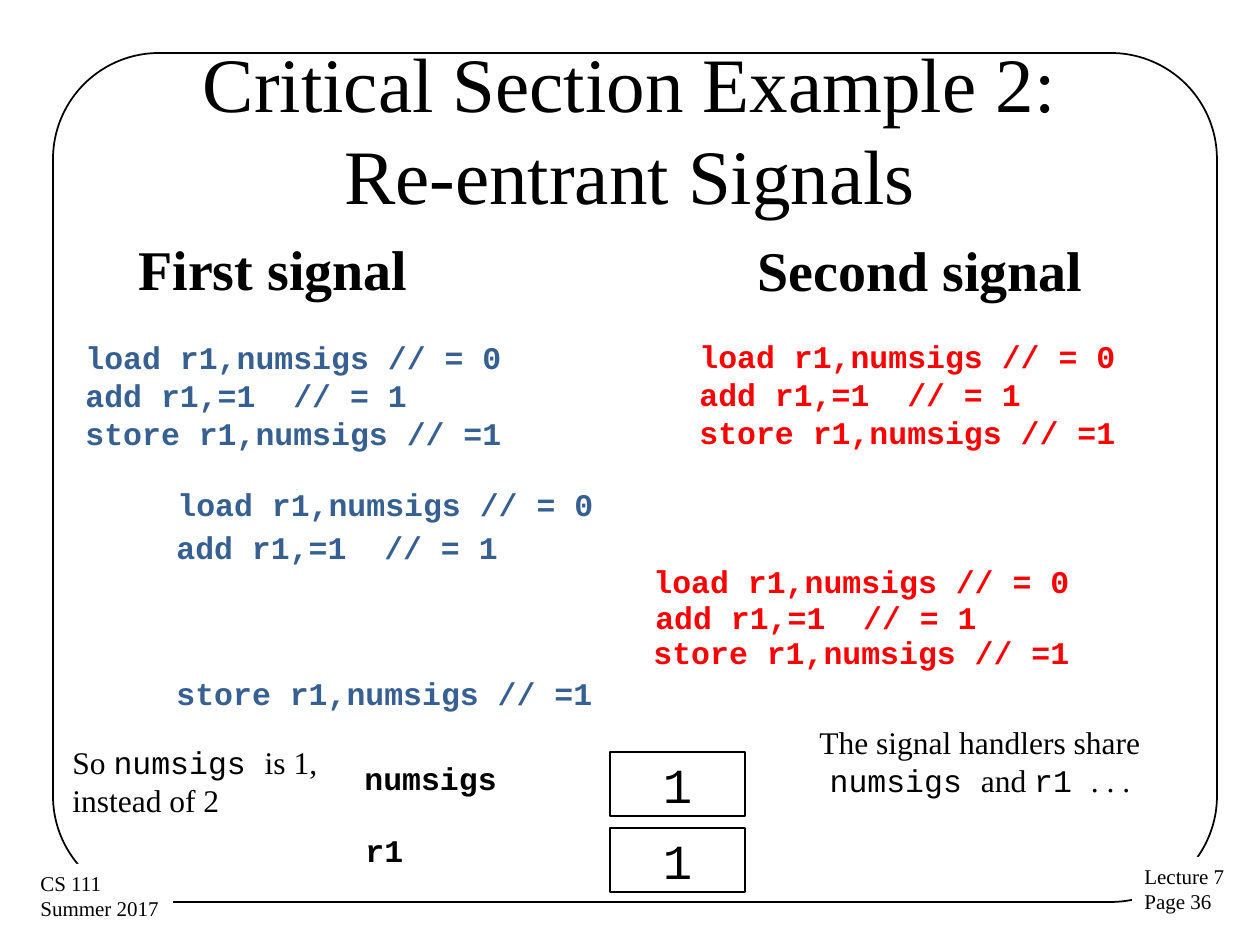
from dataclasses import dataclass

from pptx import Presentation
from pptx.dml.color import RGBColor
from pptx.enum.shapes import MSO_SHAPE
from pptx.enum.text import MSO_ANCHOR, MSO_AUTO_SIZE, PP_ALIGN
from pptx.util import Emu, Pt

BLACK = RGBColor(0x00, 0x00, 0x00)
WHITE = RGBColor(0xFF, 0xFF, 0xFF)
BLUE = RGBColor(0x37, 0x60, 0x92)
RED = RGBColor(0xFF, 0x00, 0x00)
SERIF = "Times New Roman"
MONO = "Courier New"
SCALE = 914400 / 126

LOAD = "load r1,numsigs // = 0"
ADD = "add r1,=1  // = 1"
STORE = "store r1,numsigs // =1"


@dataclass
class Label:
    box: tuple[int, int, int, int]
    lines: list[str]
    color: RGBColor = BLACK
    size: int = 18
    face: str = MONO
    bold: bool = True


@dataclass
class Note:
    box: tuple[int, int, int, int]
    runs: list[tuple[str, str]]
    align: PP_ALIGN


def px(*nums: int) -> list[Emu]:
    return [Emu(round(num * SCALE)) for num in nums]


def add_rect(slide, box, kind=MSO_SHAPE.RECTANGLE, fill=None, line=None):
    shape = slide.shapes.add_shape(kind, *px(*box))
    shape.shadow.inherit = False
    if fill is None:
        shape.fill.background()
    else:
        shape.fill.solid()
        shape.fill.fore_color.rgb = fill
    if line is None:
        shape.line.fill.background()
    else:
        shape.line.color.rgb = BLACK
        shape.line.width = Pt(line)
    return shape


def write(shape, item: Label, align: PP_ALIGN = PP_ALIGN.LEFT,
          anchor: MSO_ANCHOR = MSO_ANCHOR.TOP) -> None:
    frame = shape.text_frame
    frame.text = "\n".join(item.lines)
    frame.vertical_anchor = anchor
    for para in frame.paragraphs:
        para.alignment = align
        font = para.font
        font.name, font.size, font.bold = item.face, Pt(item.size), item.bold
        font.color.rgb = item.color


def add_label(slide, item: Label) -> None:
    shape = slide.shapes.add_textbox(*px(*item.box))
    write(shape, item)
    shape.text_frame.word_wrap = False
    shape.text_frame.auto_size = MSO_AUTO_SIZE.SHAPE_TO_FIT_TEXT


def add_footer(slide, item: Label) -> None:
    shape = add_rect(slide, item.box, fill=WHITE)
    write(shape, item)
    shape.text_frame.word_wrap = False


def add_value(slide, item: Label) -> None:
    shape = add_rect(slide, item.box, fill=WHITE, line=1.5)
    write(shape, item, PP_ALIGN.CENTER, MSO_ANCHOR.MIDDLE)


def add_note(slide, note: Note) -> None:
    frame = slide.shapes.add_textbox(*px(*note.box)).text_frame
    frame.word_wrap = True
    para = frame.paragraphs[0]
    para.alignment = note.align
    para.font.size = Pt(18)
    para.font.color.rgb = BLACK
    for text, face in note.runs:
        run = para.add_run()
        run.text = text
        run.font.name = face


def set_title(slide, text: str) -> None:
    title = slide.shapes.title
    title.left, title.top, title.width, title.height = px(63, 49, 1134, 158)
    write(title, Label((), [text], size=44, face=SERIF, bold=False),
          PP_ALIGN.CENTER, MSO_ANCHOR.MIDDLE)
    title.text_frame.auto_size = MSO_AUTO_SIZE.NONE


FOOTERS = [
    Label((1132, 857, 106, 64), ["Lecture 7", "Page 36"],
          size=12, face=SERIF, bold=False),
    Label((28, 864, 145, 64), ["CS 111", "Summer 2017"],
          size=12, face=SERIF, bold=False),
]
LABELS = [
    Label((126, 228, 297, 81), ["First signal"], size=32, face=SERIF),
    Label((745, 229, 354, 81), ["Second signal"], size=32, face=SERIF),
    Label((73, 332, 445, 127), [LOAD, ADD, STORE], BLUE),
    Label((687, 331, 445, 127), [LOAD, ADD, STORE], RED),
    Label((165, 479, 445, 50), [LOAD], BLUE),
    Label((164, 522, 350, 50), [ADD], BLUE),
    Label((641, 556, 445, 50), [LOAD], RED),
    Label((643, 592, 350, 50), [ADD], RED),
    Label((641, 627, 445, 50), [STORE], RED),
    Label((164, 668, 445, 50), [STORE], BLUE),
    Label((352, 753, 204, 64), ["numsigs"]),
    Label((353, 825, 77, 64), ["r1"]),
]
VALUES = [Label((610, top, 135, 64), ["1"], size=28, bold=False)
          for top in (752, 828)]
NOTES = [
    Note((784, 717, 392, 165),
         [("The signal handlers share ", SERIF), ("numsigs ", MONO),
          ("and ", SERIF), ("r1 ", MONO), (". . .", SERIF)],
         PP_ALIGN.CENTER),
    Note((60, 737, 306, 115),
         [("So ", SERIF), ("numsigs ", MONO), ("is 1, instead of 2", SERIF)],
         PP_ALIGN.LEFT),
]


def main() -> None:
    deck = Presentation()
    deck.slide_width, deck.slide_height = px(1260, 945)
    slide = deck.slides.add_slide(deck.slide_layouts[5])
    set_title(slide, "Critical Section Example 2:\vRe-entrant Signals")
    edge = add_rect(slide, (53, 53, 1164, 849),
                    MSO_SHAPE.ROUNDED_RECTANGLE, line=1)
    edge.adjustments[0] = 0.125
    for item in FOOTERS:
        add_footer(slide, item)
    for item in LABELS:
        add_label(slide, item)
    for item in VALUES:
        add_value(slide, item)
    for note in NOTES:
        add_note(slide, note)
    deck.save("out.pptx")


if __name__ == "__main__":
    main()
